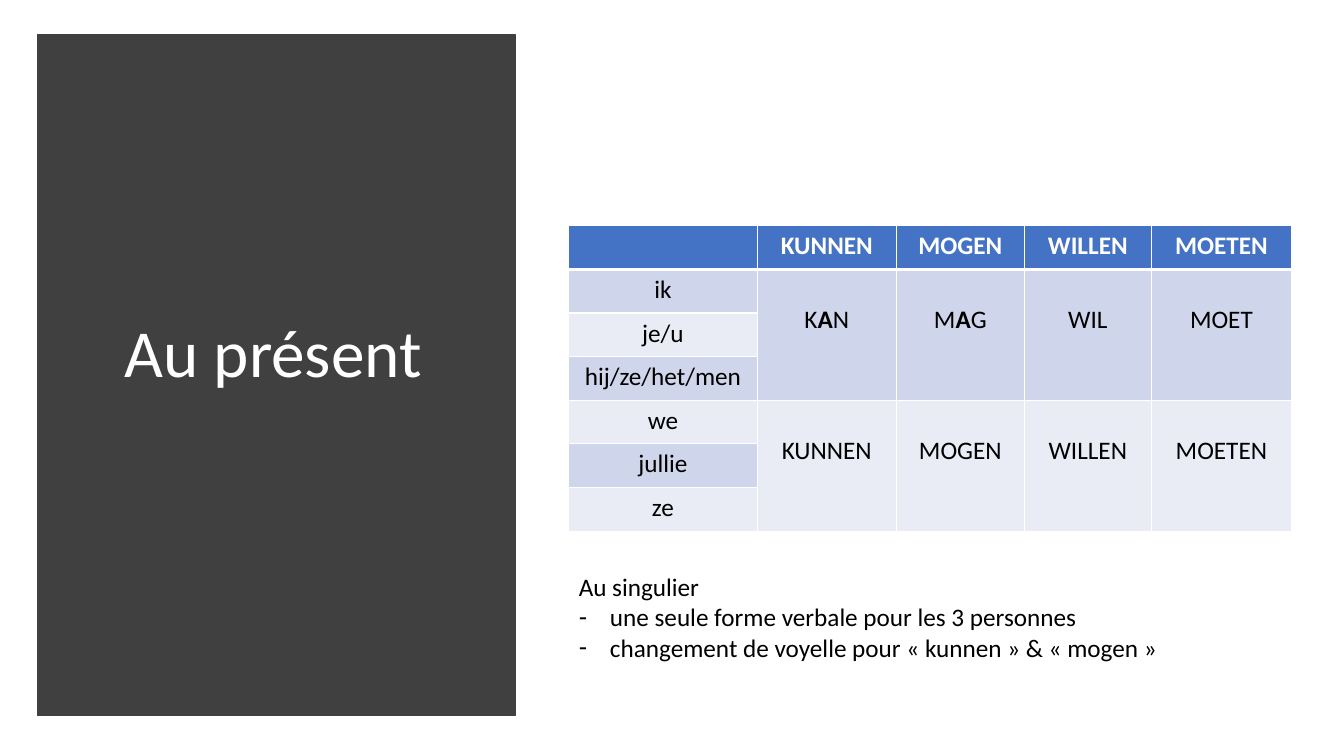
from lxml import etree
from pptx import Presentation
from pptx import util as u
from pptx.dml.color import RGBColor
from pptx.enum import shapes, text
from pptx.oxml.ns import qn

PX = 9144  # one px is a hundredth of an inch
FONT = "Calibri"
WHITE, BLACK, DARK = "FFFFFF", "000000", "404040"
HEAD, BANDS = "4472C4", ("CFD5EA", "E9EBF5")

TITLE = "Au présent"
VERBS = ["KUNNEN", "MOGEN", "WILLEN", "MOETEN"]
WHO = ["ik", "je/u", "hij/ze/het/men", "we", "jullie", "ze"]
# Each form is a list of runs; every second run is bold.
ONE = [["K", "A", "N"], ["M", "A", "G"], ["WIL"], ["MOET"]]
MANY = [[verb] for verb in VERBS]
NOTES = [
    ("Au singulier", False),
    ("une seule forme verbale pour les 3 personnes", True),
    ("changement de voyelle pour « kunnen » & « mogen »", True),
]

PANEL = (37, 34, 474, 676)
HEADING = (81, 81, 380, 543)
GRID = (564, 224, 717, 303)
COLS = [187, 138, 127, 126, 139]
BOX = (564, 562, 717, 101)
DROP = 35  # top margin of a merged cell


def rgb(code):
    return RGBColor.from_string(code)


def emu(box):
    return [u.Emu(n * PX) for n in box]


def place(shape, box):
    shape.left, shape.top, shape.width, shape.height = emu(box)


def add_run(para, words, size, color, bold=False):
    run = para.add_run()
    run.text = words
    font = run.font
    font.name, font.size, font.bold = FONT, u.Pt(size), bold
    font.color.rgb = rgb(color)


def add_edge(cell, side, width):
    props = cell._tc.get_or_add_tcPr()
    line = etree.SubElement(props, qn("a:ln" + side), w=str(u.Pt(width)))
    fill = etree.SubElement(line, qn("a:solidFill"))
    etree.SubElement(fill, qn("a:srgbClr"), val=WHITE)


def fill_cell(cell, runs, color, bold=False):
    para = cell.text_frame.paragraphs[0]
    para.alignment = text.PP_ALIGN.CENTER
    for i, words in enumerate(runs):
        add_run(para, words, 18, color, bold or i % 2 == 1)


def add_grid(slide):
    count = len(WHO) + 1
    table = slide.shapes.add_table(count, len(COLS), *emu(GRID)).table
    table.first_row = table.horz_banding = False
    for col, width in zip(table.columns, COLS):
        col.width = u.Emu(width * PX)
    for r, row in enumerate(table.rows):
        row.height = u.Emu(GRID[3] * PX // count)
        for c, cell in enumerate(row.cells):
            for side in "LRTB":
                thick = (r, side) in ((0, "B"), (1, "T"))
                add_edge(cell, side, 3 if thick else 1)
            band = (r - 1) % 2 if c == 0 else (r - 1) // 3
            cell.fill.solid()
            cell.fill.fore_color.rgb = rgb(BANDS[band] if r else HEAD)

    for c, verb in enumerate(VERBS, 1):
        fill_cell(table.cell(0, c), [verb], WHITE, True)
    for r, who in enumerate(WHO, 1):
        fill_cell(table.cell(r, 0), [who], BLACK)
    for top, forms in ((1, ONE), (4, MANY)):
        for c, runs in enumerate(forms, 1):
            cell = table.cell(top, c)
            cell.merge(table.cell(top + 2, c))
            cell.margin_top = u.Emu(DROP * PX)
            fill_cell(cell, runs, BLACK)


def add_notes(body):
    place(body, BOX)
    frame = body.text_frame
    frame.auto_size = text.MSO_AUTO_SIZE.NONE
    for i, (words, dash) in enumerate(NOTES):
        para = frame.add_paragraph() if i else frame.paragraphs[0]
        para.space_before = u.Pt(0)
        add_run(para, words, 18, BLACK)
        props = para._p.get_or_add_pPr()
        indent = 31 * PX if dash else 0
        props.set("marL", str(indent))
        props.set("indent", str(-indent))
        if dash:
            etree.SubElement(props, qn("a:buFontTx"))
            etree.SubElement(props, qn("a:buChar"), char="-")
        else:
            etree.SubElement(props, qn("a:buNone"))


def main():
    deck = Presentation()
    deck.slide_width, deck.slide_height = emu((1333, 750))
    slide = deck.slides.add_slide(deck.slide_layouts[1])
    title, body = slide.placeholders

    panel = slide.shapes.add_shape(shapes.MSO_SHAPE.RECTANGLE, *emu(PANEL))
    panel.shadow.inherit = False
    panel.fill.solid()
    panel.fill.fore_color.rgb = panel.line.color.rgb = rgb(DARK)
    panel.line.width = u.Pt(1)
    title._element.addprevious(panel._element)

    place(title, HEADING)
    frame = title.text_frame
    frame.vertical_anchor = text.MSO_ANCHOR.MIDDLE
    para = frame.paragraphs[0]
    para.alignment = text.PP_ALIGN.CENTER
    para.line_spacing = 0.9
    add_run(para, TITLE, 48, WHITE)

    add_grid(slide)
    add_notes(body)
    deck.save("out.pptx")


if __name__ == "__main__":
    main()
